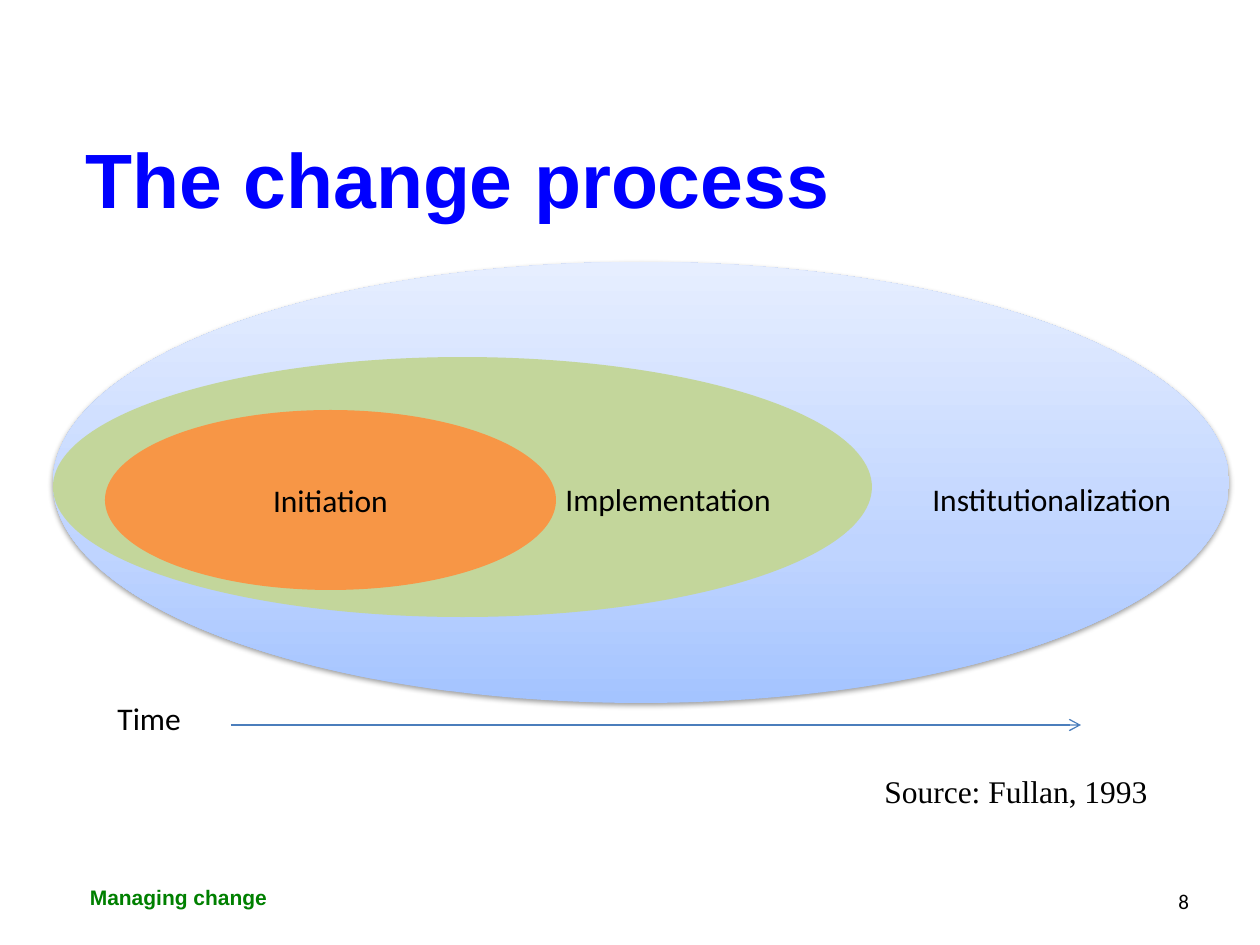
from dataclasses import dataclass

from pptx import Presentation, oxml
from pptx import util as u
from pptx.dml.color import RGBColor
from pptx.enum import shapes, text
from pptx.oxml import ns

PX = 914400 / 126


@dataclass(frozen=True)
class Theme:
    ink: str = "000000"
    title: str = "0000FF"
    footer: str = "008000"
    implementation: str = "C3D69B"
    initiation: str = "F79646"
    arrow: str = "4B7EBC"
    institution: tuple = ((0, "A4C4FF"), (35, "BFD4FF"), (100, "E6EEFF"))
    body_font: str = "Calibri"
    head_font: str = "Arial"
    source_font: str = "Times New Roman"
    title_size: int = 44
    body_size: int = 18
    small_size: int = 12


def emu(*px):
    return [u.Emu(round(v * PX)) for v in px]


def xml(tag, attrs="", inner=""):
    return oxml.parse_xml(f'<a:{tag} {ns.nsdecls("a")} {attrs}>{inner}</a:{tag}>')


class ChangeSlide:
    """Draws styled elements on the current slide."""

    def __init__(self, s, theme):
        self.s, self.theme = s, theme

    def set_text(self, tf, words, size=None, font=None, color=None, bold=False, center=False):
        t = self.theme
        tf.text = words
        p = tf.paragraphs[0]
        p.alignment = text.PP_ALIGN.CENTER if center else text.PP_ALIGN.LEFT
        r = p.runs[0]
        r.font.size = u.Pt(size or t.body_size)
        r.font.name = font or t.body_font
        r.font.bold = bold
        r.font.color.rgb = RGBColor.from_string(color or t.ink)

    def label(self, box, words, wrap=True, middle=False, **style):
        tf = self.s.shapes.add_textbox(*emu(*box)).text_frame
        tf.word_wrap = wrap
        if middle:
            tf.vertical_anchor = text.MSO_ANCHOR.MIDDLE
        else:
            tf.auto_size = text.MSO_AUTO_SIZE.SHAPE_TO_FIT_TEXT
        self.set_text(tf, words, **style)

    def ellipse(self, box, color=None, words=None):
        sp = self.s.shapes.add_shape(shapes.MSO_SHAPE.OVAL, *emu(*box))
        sp.shadow.inherit = False
        sp.line.fill.background()
        if color:
            sp.fill.solid()
            sp.fill.fore_color.rgb = RGBColor.from_string(color)
        if words:
            sp.text_frame.vertical_anchor = text.MSO_ANCHOR.MIDDLE
            self.set_text(sp.text_frame, words, center=True)
        return sp

    def shaded_ellipse(self, box, stops):
        sp = self.ellipse(box)
        sp.fill.gradient()
        sp.fill.gradient_angle = 90
        props = sp._element.spPr
        stop_list = props.find(f'.//{ns.qn("a:gsLst")}')
        for stop in list(stop_list):
            stop_list.remove(stop)
        for pos, color in stops:
            stop_list.append(xml("gs", f'pos="{pos * 1000}"', f'<a:srgbClr val="{color}"/>'))
        props.find(ns.qn("a:effectLst")).append(xml(
            "outerShdw", 'blurRad="40000" dist="20000" dir="5400000" rotWithShape="0"',
            '<a:srgbClr val="000000"><a:alpha val="38000"/></a:srgbClr>'))

    def arrow(self, x1, x2, y):
        c = self.s.shapes.add_connector(shapes.MSO_CONNECTOR.STRAIGHT, *emu(x1, y, x2, y))
        c.line.color.rgb = RGBColor.from_string(self.theme.arrow)
        c.line.width = u.Pt(0.75)
        c.line._get_or_add_ln().append(xml("tailEnd", 'type="arrow"'))
        c._element.spPr.append(xml("effectLst"))


def main():
    prs = Presentation()
    prs.slide_width, prs.slide_height = emu(1260, 945)
    t = Theme()
    d = ChangeSlide(prs.slides.add_slide(prs.slide_layouts[6]), t)

    d.shaded_ellipse((53, 262, 1176, 441), t.institution)
    d.ellipse((53, 357, 819, 260), t.implementation)
    d.ellipse((105, 410, 451, 180), t.initiation, "Initiation")
    d.label((920, 474, 267, 50), "Institutionalization", wrap=False)
    d.label((105, 693, 95, 50), "Time")
    d.arrow(231, 1081, 725)
    d.label((872, 766, 349, 50), "Source: Fullan, 1993", font=t.source_font)
    d.label((73, 125, 798, 106), "The change process", size=t.title_size,
            font=t.head_font, color=t.title, bold=True)
    d.label((553, 474, 234, 50), "Implementation", wrap=False)
    d.label((1166, 882, 37, 38), "8", wrap=False, size=t.small_size)
    d.label((-21, 872, 399, 50), "Managing change", middle=True, size=t.small_size,
            font=t.head_font, color=t.footer, bold=True, center=True)
    prs.save("out.pptx")


if __name__ == "__main__":
    main()
